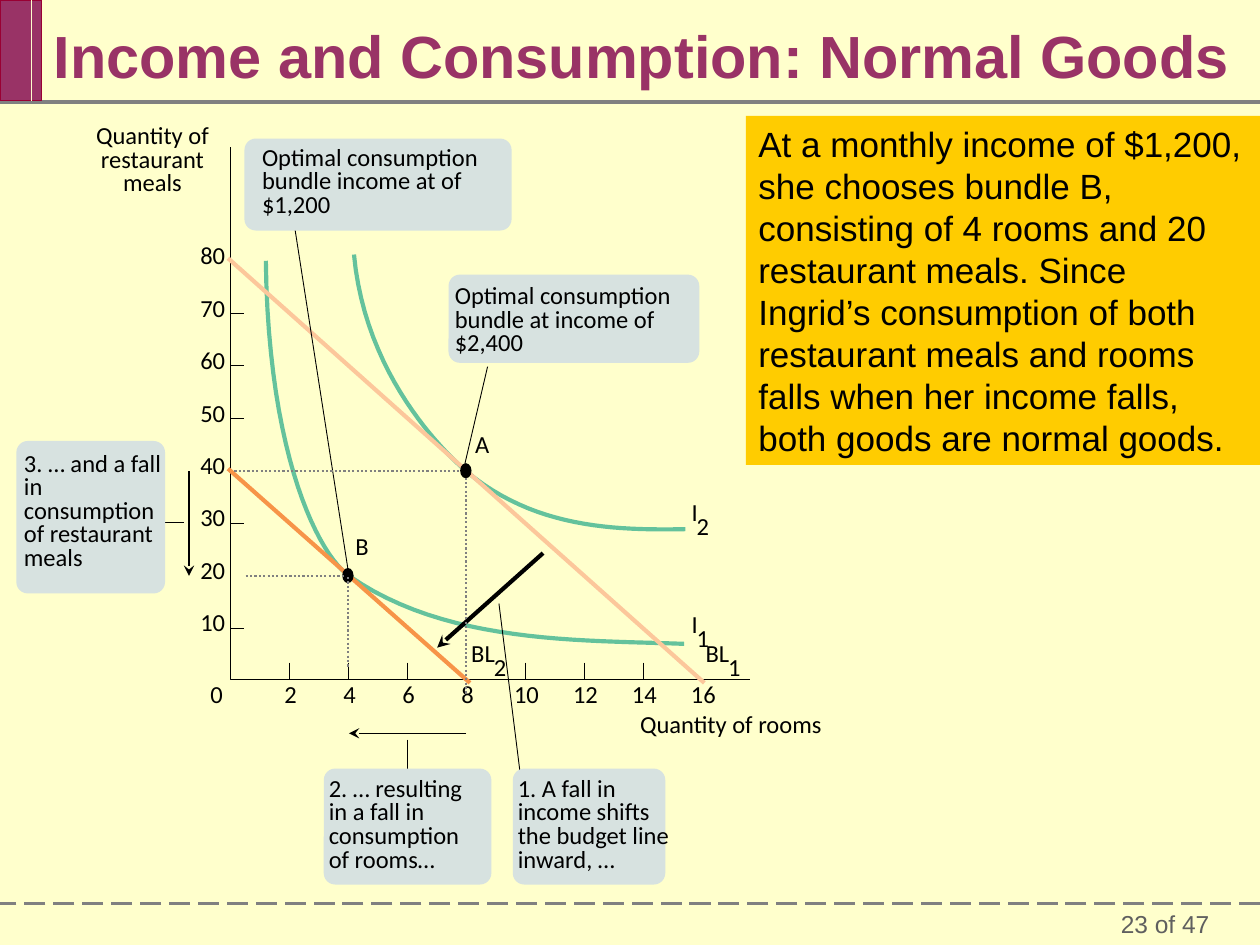
from dataclasses import dataclass

from lxml.etree import SubElement
from pptx import Presentation
from pptx.dml.color import RGBColor
from pptx.enum.dml import MSO_LINE_DASH_STYLE as Dash
from pptx.enum.shapes import MSO_CONNECTOR, MSO_SHAPE as Shape
from pptx.enum.text import MSO_ANCHOR as Anchor, PP_ALIGN as Align
from pptx.oxml.ns import qn
from pptx.util import Inches, Pt

BLACK, GRAY, CREAM, PLUM = "000000", "808080", "FFFFCC", "993366"
CALLOUT_FILL, CURVE_GREEN = "D7E2E0", "64C29C"
LOW_BUDGET, HIGH_BUDGET = "F79448", "FCC79B"
AXIS_X, AXIS_Y = 1.83, 5.39
THIN, THICK = 0.5, 2.38
DEFAULT_INSETS = (0.1, 0.05, 0.1, 0.05)

Point = tuple[float, float]
Box = tuple[float, float, float, float]


@dataclass(frozen=True)
class Callout:
    text: str
    box: Box
    text_box: Box


@dataclass(frozen=True)
class LineLabel:
    name: str
    subscript: str
    left: float
    top: float
    subscript_shift: float


CALLOUTS = [
    Callout("Optimal consumption bundle income at of $1,200",
            (1.94, 1.1, 2.12, 0.73), (2.08, 1.17, 1.96, 0.56)),
    Callout("Optimal consumption bundle at income of $2,400",
            (3.56, 2.18, 1.99, 0.7), (3.61, 2.27, 1.83, 0.56)),
    Callout("3. … and a fall in consumption of restaurant meals",
            (0.13, 3.5, 1.18, 1.21), (0.19, 3.6, 1.14, 0.93)),
    Callout("2. … resulting in a fall in consumption of rooms…",
            (2.57, 6.1, 1.33, 0.92), (2.61, 6.18, 1.23, 0.74)),
    Callout("1. A fall in income shifts the budget line inward, …",
            (4.07, 6.1, 1.21, 0.92), (4.11, 6.18, 1.23, 0.74)),
]
LINE_LABELS = [
    LineLabel("BL", "1", 5.6, 5.11, 0.18),
    LineLabel("BL", "2", 3.74, 5.11, 0.18),
    LineLabel("I", "2", 5.49, 3.99, 0.04),
    LineLabel("I", "1", 5.49, 4.88, 0.04),
]
# Each indifference curve: a start, then Bézier segments of two controls and an end.
INDIFFERENCE_CURVES = [
    ((2.81, 2.02), [((2.9, 2.99), (3.53, 3.59), (3.7, 3.74)),
                    ((4.24, 4.19), (4.87, 4.21), (5.44, 4.2))]),
    ((2.11, 2.07), [((2.13, 3.67), (2.55, 4.42), (2.77, 4.57)),
                    ((3.54, 5.11), (4.6, 5.08), (5.43, 5.11))]),
]
LEADERS = [
    ((1.28, 4.15), (1.46, 4.15)),
    ((3.23, 5.87), (3.23, 6.11)),
    ((3.69, 3.68), (3.87, 2.91)),
    ((2.34, 1.81), (2.77, 4.57)),
    ((3.96, 4.79), (4.13, 6.15)),
]
GUIDES = [
    ((1.95, 4.57), (2.74, 4.57)),
    ((2.76, 4.58), (2.76, 5.29)),
    ((1.86, 3.74), (3.64, 3.74)),
    ((3.7, 3.79), (3.7, 5.52)),
]
ARROWS = [
    ((3.7, 5.82), (2.77, 5.82), 0.88),
    ((1.5, 3.74), (1.5, 4.57), 0.88),
    ((4.31, 4.39), (3.47, 5.14), THICK),
]

prs = Presentation()
prs.slide_width, prs.slide_height = Inches(10), Inches(7.5)
slide = prs.slides.add_slide(prs.slide_layouts[6])
shapes = slide.shapes


def color(hex_code: str) -> RGBColor:
    return RGBColor.from_string(hex_code)


def rooms_x(rooms: float) -> float:
    return AXIS_X + 0.234 * rooms


def meals_y(meals: float) -> float:
    return 5.4 - 0.0416 * meals


def write(frame, text: str, *, size=14, font="Calibri", hex_code=BLACK, bold=False,
          align=Align.LEFT, anchor=Anchor.TOP, spacing=0.8, insets=(0, 0, 0, 0), wrap=True):
    frame.word_wrap = wrap
    frame.vertical_anchor = anchor
    (frame.margin_left, frame.margin_top,
     frame.margin_right, frame.margin_bottom) = map(Inches, insets)
    paragraph = frame.paragraphs[0]
    paragraph.alignment, paragraph.line_spacing = align, spacing
    run = paragraph.add_run()
    run.text = text
    run.font.size, run.font.name, run.font.bold = Pt(size), font, bold
    run.font.color.rgb = color(hex_code)


def add_text(box: Box, text: str, **style):
    write(shapes.add_textbox(*map(Inches, box)).text_frame, text, **style)


def add_block(kind: Shape, box: Box, fill: str, outline: str | None = None):
    block = shapes.add_shape(kind, *map(Inches, box))
    block.shadow.inherit = False
    block.fill.solid()
    block.fill.fore_color.rgb = color(fill)
    if outline:
        block.line.color.rgb = color(outline)
        block.line.width = Pt(0.75)
    else:
        block.line.fill.background()
    return block


def add_line(start: Point, end: Point, hex_code=BLACK, width=THIN, dash=None, arrow=False):
    line = shapes.add_connector(MSO_CONNECTOR.STRAIGHT, *map(Inches, (*start, *end)))
    line.line.color.rgb = color(hex_code)
    line.line.width = Pt(width)
    if dash:
        line.line.dash_style = dash
    properties = line._element.spPr
    if arrow:
        SubElement(properties.find(qn("a:ln")), qn("a:tailEnd"), type="stealth")
    SubElement(properties, qn("a:effectLst"))


def add_path(points: list[Point], hex_code: str, width: float):
    corners = [(Inches(x), Inches(y)) for x, y in points]
    builder = shapes.build_freeform(*corners[0], scale=1.0)
    builder.add_line_segments(corners[1:], close=False)
    path = builder.convert_to_shape()
    path.shadow.inherit = False
    path.fill.background()
    path.line.color.rgb = color(hex_code)
    path.line.width = Pt(width)


def bezier_points(start: Point, segments, steps=24) -> list[Point]:
    """Sample joined cubic Bézier segments as a smooth run of points."""
    points = [start]
    for controls in segments:
        corners = (points[-1], *controls)
        for step in range(1, steps + 1):
            t = step / steps
            weights = ((1 - t) ** 3, 3 * t * (1 - t) ** 2, 3 * t * t * (1 - t), t ** 3)
            points.append(tuple(sum(w * c[axis] for w, c in zip(weights, corners))
                                for axis in (0, 1)))
    return points


def draw_frame():
    slide.background.fill.solid()
    slide.background.fill.fore_color.rgb = color(CREAM)
    add_text((8.5, 7.17, 1.5, 0.33), "23 of 47", font="Arial", hex_code="5F5F5F",
             align=Align.RIGHT, anchor=Anchor.MIDDLE, spacing=1, insets=(0.1, 0.05, 0.4, 0.05))
    add_line((10, 7.17), (0, 7.17), GRAY, 1.5, Dash.LONG_DASH)
    add_line((10, 0.81), (0, 0.81), GRAY, 2)
    add_block(Shape.RECTANGLE, (0, 0, 0.33, 0.8), PLUM, "990033")
    add_line((0.25, 0), (0.25, 0.8), CREAM, 0.75)
    add_text((0.33, 0.21, 9.67, 0.55), "Income and Consumption: Normal Goods", size=34,
             font="Arial", hex_code=PLUM, bold=True, insets=DEFAULT_INSETS)


def draw_axes():
    add_path([(5.95, AXIS_Y), (AXIS_X, AXIS_Y), (AXIS_X, 1.17)], BLACK, THIN)
    add_text((0.67, 1, 1.08, 0.56), "Quantity of restaurant meals", align=Align.CENTER)
    add_text((5.08, 5.67, 1.47, 0.19), "Quantity of rooms", wrap=False)
    add_text((1.67, 5.43, 0.1, 0.18), "0", wrap=False)
    for rooms in range(2, 17, 2):
        x, width = rooms_x(rooms), 0.1 * len(str(rooms))
        add_text((x + 0.01 - width / 2, 5.43, width, 0.18), str(rooms), wrap=False)
        if rooms not in (8, 16):
            add_line((x, 5.26), (x, AXIS_Y))
    for meals in range(10, 81, 10):
        y = meals_y(meals)
        add_text((1.59, y - 0.12, 0.2, 0.19), str(meals), wrap=False)
        if meals not in (20, 40, 80):
            add_line((AXIS_X, y), (1.94, y))


def draw_diagram():
    for start, segments in INDIFFERENCE_CURVES:
        add_path(bezier_points(start, segments), CURVE_GREEN, THICK)
    add_line((1.81, 3.72), (3.73, 5.42), LOW_BUDGET, THICK)
    add_line((1.81, 2.05), (5.59, 5.42), HIGH_BUDGET, THICK)
    for start, end in LEADERS:
        add_line(start, end)
    for callout in CALLOUTS:
        block = add_block(Shape.ROUNDED_RECTANGLE, callout.box, CALLOUT_FILL)
        block.adjustments[0] = 0.09 / min(callout.box[2:])
        add_text(callout.text_box, callout.text)
    for label in LINE_LABELS:
        add_text((label.left, label.top, 0.1 * len(label.name), 0.19), label.name, wrap=False)
        add_text((label.left + label.subscript_shift, label.top + 0.11, 0.1, 0.19),
                 label.subscript, wrap=False)
    for bundle, rooms, meals, left, top in (("A", 8, 40, 3.77, 3.45), ("B", 4, 20, 2.82, 4.26)):
        add_block(Shape.OVAL, (rooms_x(rooms) - 0.05, meals_y(meals) - 0.06, 0.09, 0.12), BLACK)
        add_text((left, top, 0.12, 0.19), bundle, wrap=False)
    for start, end, width in ARROWS:
        add_line(start, end, width=width, arrow=True)
    for start, end in GUIDES:
        add_line(start, end, GRAY, 1.25, Dash.ROUND_DOT)


def draw_explanation():
    panel = add_block(Shape.RECTANGLE, (5.92, 0.92, 4.08, 2.77), "FFCC00")
    write(panel.text_frame,
          "At a monthly income of $1,200, she chooses bundle B, consisting of 4 rooms and 20 "
          "restaurant meals. Since Ingrid’s consumption of both restaurant meals and rooms falls "
          "when her income falls, both goods are normal goods.",
          size=20, font="Arial", spacing=1, insets=DEFAULT_INSETS)


draw_frame()
draw_axes()
draw_diagram()
draw_explanation()
prs.save("out.pptx")
